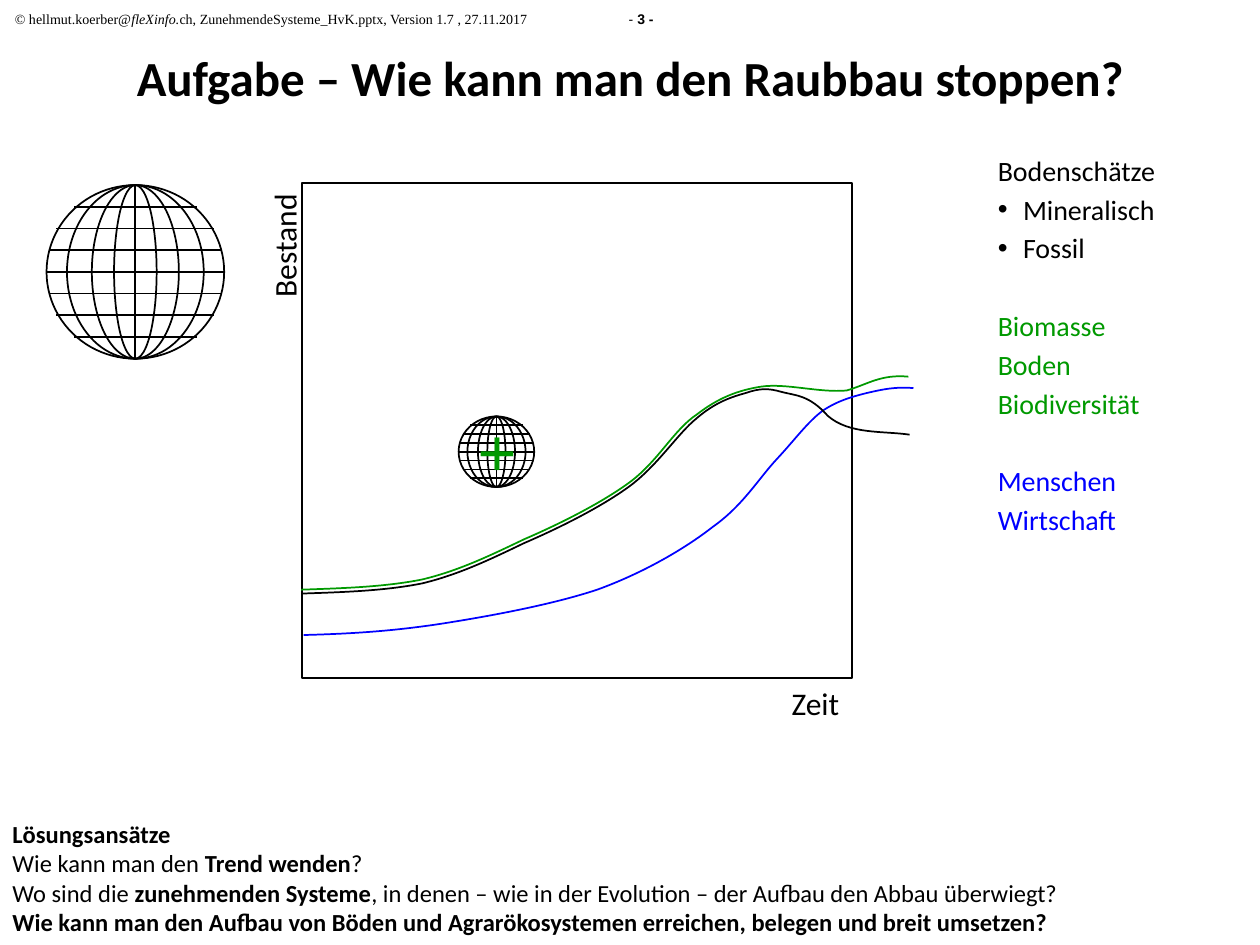
from lxml import etree
from pptx import Presentation
from pptx.dml.color import RGBColor
from pptx.enum import shapes, text
from pptx.oxml.ns import qn
from pptx.util import Pt

BLACK, GREEN, BLUE = "000000", "009900", "0000FF"
SANS, SERIF = "Calibri", "Times New Roman"

TITLE = "Aufgabe – Wie kann man den Raubbau stoppen?"
# (text, font, bold, italic)
HEADER = [
    ("© hellmut.koerber@", SERIF, False, False),
    ("fleXinfo.", SERIF, False, True),
    ("ch, ZunehmendeSysteme_HvK.pptx, Version 1.7 , 27.11.2017\t", SERIF, False, False),
    ("- ", "Arial", False, False),
    ("3 -", "Arial", True, False),
]
# colour, entries as (text, bulleted)
RESOURCES = [
    (BLACK, [("Bodenschätze", False), ("Mineralisch", True), ("Fossil", True)]),
    (GREEN, [("Biomasse", False), ("Boden", False), ("Biodiversität", False)]),
    (BLUE, [("Menschen", False), ("Wirtschaft", False)]),
]
# paragraphs of (text, bold)
SOLUTIONS = [
    [("Lösungsansätze", True)],
    [("Wie kann man den ", False), ("Trend wenden", True), ("?", False)],
    [("Wo sind die ", False), ("zunehmenden Systeme", True),
     (", in denen – wie in der Evolution – der Aufbau den Abbau überwiegt?", False)],
    [("Wie kann man den Aufbau von Böden und Agrarökosystemen erreichen, "
      "belegen und breit umsetzen?", True)],
]
# Curves: a start point, then two control points and an end point per segment
SHARED_RISE = [
    (172.1, 337), (195.8, 336.2), (219.6, 335.5), (241.2, 331.2),
    (262.1, 326.2), (280.1, 317.5), (299.5, 308.2),
    (319.7, 299.5), (344.2, 287.3), (360.7, 275),
]
BIOMASS = SHARED_RISE + [
    (376.6, 262.8), (385.2, 245.5), (398.2, 236.9),
    (410.4, 227.5), (421.2, 223.2), (434.9, 221),
    (449.3, 218.9), (468, 224.6), (483.8, 223.2),
    (496.1, 219.6), (503.3, 213.8), (519.1, 215.3),
]
MINERALS = [(x, y + 2.2) for x, y in SHARED_RISE] + [
    (376.6, 265), (387.4, 247.7), (398.2, 239),
    (409, 229.7), (418.3, 226.8), (426.2, 224.6),
    (434.2, 221.8), (439.2, 221.8), (446.4, 223.9),
    (454.3, 226.1), (462.2, 225.4), (473, 237.6),
    (485.3, 248.4), (504.7, 246.2), (519.8, 248.4),
]
PEOPLE = [
    (173.5, 362.9), (200.9, 362.2), (224.6, 360.7), (252.7, 356.4),
    (280.1, 352.1), (315.4, 345.6), (341.3, 337),
    (367.2, 327.6), (391, 313.9), (407.5, 301),
    (424.8, 288.7), (433.4, 273.6), (444.2, 262.1),
    (454.3, 251.3), (461.5, 241.2), (470.2, 234.7),
    (478.8, 229), (486.7, 226.8), (495.4, 224.6),
    (504.7, 222.5), (511.2, 221), (522, 221.8),
]
MERIDIANS = [1, 0.77, 0.49, 0.24]   # ellipse widths as shares of the globe
PARALLELS = [1, 0.97, 0.89, 0.69]   # line lengths from the equator to the pole


def rgb(value):
    return RGBColor.from_string(value)


def style(font, size, name=SANS, color=BLACK, bold=False, italic=False):
    font.size, font.name, font.bold, font.italic = Pt(size), name, bold, italic
    font.color.rgb = rgb(color)


def place(shape, left, top, width, height):
    shape.left, shape.top, shape.width, shape.height = map(Pt, (left, top, width, height))


def outline(shape, color=BLACK):
    shape.shadow.inherit = False
    shape.fill.background()
    shape.line.color.rgb = rgb(color)
    shape.line.width = Pt(1)


def add_outlined(parent, kind, left, top, width, height):
    shape = parent.add_shape(kind, *map(Pt, (left, top, width, height)))
    outline(shape)
    return shape


def add_line(parent, x1, y1, x2, y2):
    line = parent.add_connector(shapes.MSO_CONNECTOR.STRAIGHT, *map(Pt, (x1, y1, x2, y2)))
    line.line.color.rgb = rgb(BLACK)
    line.line.width = Pt(1)
    etree.SubElement(line._element.spPr, qn("a:effectLst"))


def add_globe(left, top, width, height):
    globe = slide.shapes.add_group_shape().shapes
    mid_x, mid_y = left + width / 2, top + height / 2
    for share in MERIDIANS:
        add_outlined(globe, shapes.MSO_SHAPE.OVAL,
                     mid_x - width * share / 2, top, width * share, height)
    add_line(globe, mid_x, top, mid_x, top + height)
    for step in range(-3, 4):
        half = width * PARALLELS[abs(step)] / 2
        y = mid_y + step * height / 8
        add_line(globe, mid_x - half, y, mid_x + half, y)
    return globe


def add_curve(points, color):
    """Draw the points as one freeform, each three segments becoming a Bézier."""
    builder = slide.shapes.build_freeform(*map(Pt, points[0]))
    builder.add_line_segments([(Pt(x), Pt(y)) for x, y in points[1:]], close=False)
    curve = builder.convert_to_shape()
    outline(curve, color)
    segments = list(curve._element.iter(qn("a:lnTo")))
    for first in range(0, len(segments), 3):
        bezier = etree.Element(qn("a:cubicBezTo"))
        segments[first].addprevious(bezier)
        for segment in segments[first:first + 3]:
            bezier.append(segment[0])
            segment.getparent().remove(segment)


def add_box(left, top, width, height):
    box = slide.shapes.add_textbox(*map(Pt, (left, top, width, height)))
    box.text_frame.word_wrap = True
    return box


def add_axis_label(label, left, top, width, height, rotation=0):
    box = add_box(left, top, width, height)
    box.rotation = rotation
    box.text_frame.text = label
    paragraph = box.text_frame.paragraphs[0]
    paragraph.alignment = text.PP_ALIGN.RIGHT
    style(paragraph.runs[0].font, 18)


def set_bullet(paragraph, bulleted):
    props = paragraph._p.get_or_add_pPr()
    indent = Pt(14.4) if bulleted else 0
    props.set("marL", str(indent))
    props.set("indent", str(-indent))
    if bulleted:
        etree.SubElement(props, qn("a:buChar"), char="•")
    else:
        etree.SubElement(props, qn("a:buNone"))


def next_paragraph(frame, is_first):
    return frame.paragraphs[0] if is_first else frame.add_paragraph()


prs = Presentation()
prs.slide_width, prs.slide_height = Pt(720), Pt(540)
slide = prs.slides.add_slide(prs.slide_layouts[1])

header = add_box(1.4, 2.2, 718.6, 16.6).text_frame.paragraphs[0]
tabs = etree.SubElement(header._p.get_or_add_pPr(), qn("a:tabLst"))
etree.SubElement(tabs, qn("a:tab"), pos=str(Pt(350.8)), algn="l")
for part, name, bold, italic in HEADER:
    run = header.add_run()
    run.text = part
    style(run.font, 8, name, bold=bold, italic=italic)

title = slide.shapes.title
place(title, 36, 18.7, 648, 50.4)
title.text_frame.text = TITLE
title.text_frame.auto_size = text.MSO_AUTO_SIZE.NONE
title.text_frame.vertical_anchor = text.MSO_ANCHOR.MIDDLE
title.text_frame.paragraphs[0].alignment = text.PP_ALIGN.CENTER
style(title.text_frame.paragraphs[0].runs[0].font, 28, bold=True)

resources = slide.placeholders[1]
place(resources, 563, 84.2, 133.9, 324)
resources.text_frame.auto_size = text.MSO_AUTO_SIZE.NONE
for group, (color, entries) in enumerate(RESOURCES):
    for row, (entry, bulleted) in enumerate(entries):
        paragraph = next_paragraph(resources.text_frame, group == row == 0)
        paragraph.text = entry
        set_bullet(paragraph, bulleted)
        gap = 2.9 if row else 25.3
        paragraph.space_before = Pt(gap if group or row else 0)
        style(paragraph.runs[0].font, 16, color=color)

add_globe(26.6, 105.8, 101.5, 99.2)
add_outlined(slide.shapes, shapes.MSO_SHAPE.RECTANGLE, 172.8, 104.4, 313.9, 283)
add_curve(BIOMASS, GREEN)
add_curve(PEOPLE, BLUE)

small_globe = add_globe(262.1, 238, 43.2, 40.3)
plus = add_outlined(small_globe, shapes.MSO_SHAPE.OVAL, 267.8, 240.5, 32.4, 32.4)
plus.line.fill.background()
plus.text_frame.text = "+"
plus.text_frame.word_wrap = False
plus.text_frame.vertical_anchor = text.MSO_ANCHOR.MIDDLE
plus.text_frame.paragraphs[0].alignment = text.PP_ALIGN.CENTER
style(plus.text_frame.paragraphs[0].runs[0].font, 40, SERIF, GREEN, bold=True)

add_axis_label("Zeit", 416.9, 387.4, 69.8, 21.6)
add_axis_label("Bestand", 124.6, 127.4, 75.6, 28.8, rotation=270)
add_curve(MINERALS, BLACK)

solutions = add_box(0, 464.4, 720, 74.9).text_frame
for row, parts in enumerate(SOLUTIONS):
    paragraph = next_paragraph(solutions, row == 0)
    for part, bold in parts:
        run = paragraph.add_run()
        run.text = part
        style(run.font, 14, bold=bold)

prs.save("out.pptx")
